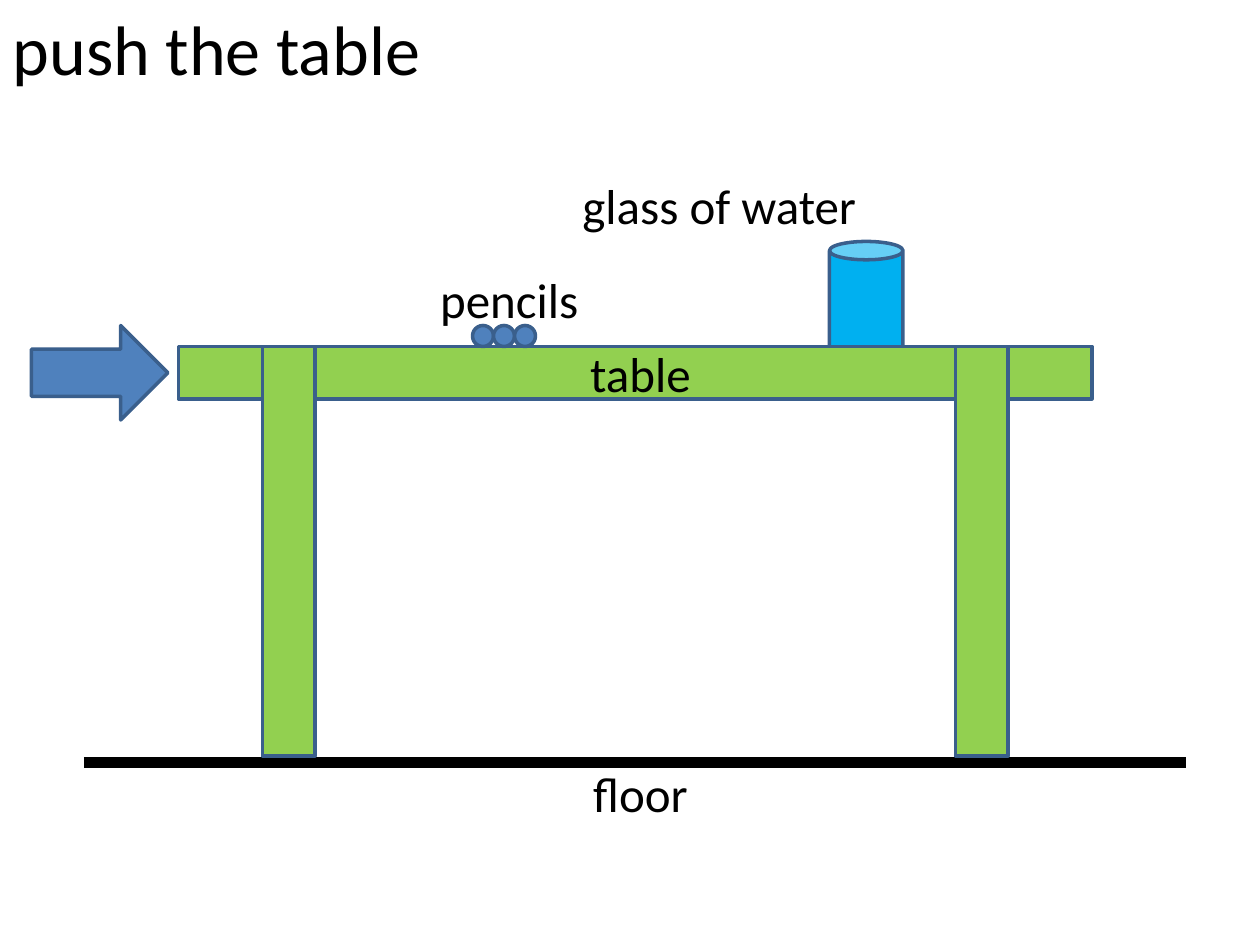
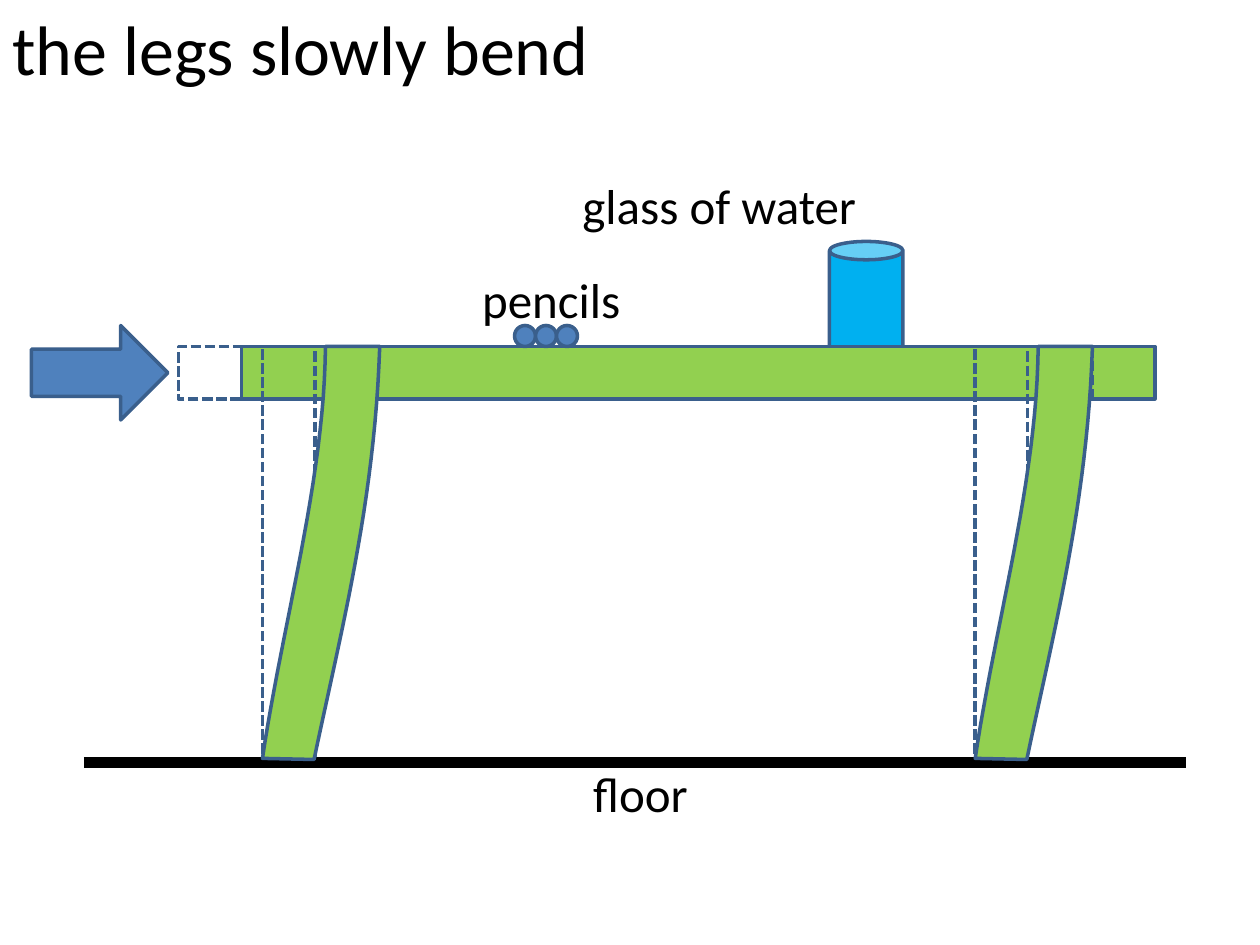
from lxml import etree
from pptx import Presentation
from pptx.dml.color import RGBColor
from pptx.enum import dml, shapes, text
from pptx.oxml import ns
from pptx.util import Pt

FONT = "Calibri"
BLACK, OUTLINE, BLUE = "000000", "3A5F8C", "4F81BD"
GREEN, WATER = "92D050", "00B0F0"

TABLE_TOP = (102, 198, 522, 30)
LEG_WIDTH, LEG_HEIGHT = 30, 234
PUSH = 36  # how far the table top moves
FLOOR = (48, 435.6, 630)
GLASS = (474, 138, 42, 66)
ARROW = (18, 186, 78, 54)
PENCIL = 12


def colour(code):
    return RGBColor.from_string(code)


def lengths(box):
    return [Pt(value) for value in box]


def finish(shape, fill, dashed=False):
    """Apply the common outline, with a solid fill or none."""
    shape.shadow.inherit = False
    if fill:
        shape.fill.solid()
        shape.fill.fore_color.rgb = colour(fill)
    else:
        shape.fill.background()
    shape.line.color.rgb = colour(OUTLINE)
    shape.line.width = Pt(2)
    if dashed:
        shape.line.dash_style = dml.MSO_LINE.SQUARE_DOT
        # sysDash is the short dash with even gaps
        shape.line._get_or_add_ln().find(ns.qn("a:prstDash")).set("val", "sysDash")


def add_part(page, kind, box, fill=None, dashed=False):
    shape = page.shapes.add_shape(kind, *lengths(box))
    finish(shape, fill, dashed)


def add_bar(page, box, fill=GREEN):
    """Draw a rectangle: solid, or a dashed ghost when fill is None."""
    add_part(page, shapes.MSO_SHAPE.RECTANGLE, box, fill, dashed=fill is None)


def write(box, words, size, align):
    frame = box.text_frame
    frame.text = words
    frame.word_wrap = True
    frame.auto_size = text.MSO_AUTO_SIZE.NONE
    frame.vertical_anchor = text.MSO_ANCHOR.MIDDLE
    para = frame.paragraphs[0]
    para.alignment = align
    font = para.runs[0].font
    font.name, font.size = FONT, Pt(size)
    font.color.rgb = colour(BLACK)


def add_label(page, words, box):
    write(page.shapes.add_textbox(*lengths(box)), words, 28, text.PP_ALIGN.CENTER)


def add_heading(page, words, width):
    title = page.shapes.title
    title.left, title.top, title.width, title.height = lengths((0, 0, width, 54))
    write(title, words, 40, text.PP_ALIGN.LEFT)


def add_floor(page):
    left, top, width = FLOOR
    line = page.shapes.add_connector(
        shapes.MSO_CONNECTOR.STRAIGHT, *lengths((left, top, left + width, top)))
    line.line.color.rgb = colour(BLACK)
    line.line.width = Pt(6)
    etree.SubElement(line._element.spPr, ns.qn("a:effectLst"))
    add_label(page, "floor", (42, 408, 648, 90))


def add_glass(page):
    add_part(page, shapes.MSO_SHAPE.CAN, GLASS, WATER)
    add_label(page, "glass of water", (306, 72, 210, 90))


def add_pencils(page, left):
    """Lay three round pencils side by side on the table top."""
    top = TABLE_TOP[1] - PENCIL
    for place in range(3):
        box = (left + place * PENCIL, top, PENCIL, PENCIL)
        add_part(page, shapes.MSO_SHAPE.OVAL, box, BLUE)
    add_label(page, "pencils", (left - 84, top - 60, 210, 90))


def curve(start, bend_1, bend_2, end, steps=24):
    """Return points along a cubic curve."""
    points = []
    for step in range(steps + 1):
        t = step / steps
        weights = ((1 - t) ** 3, 3 * t * (1 - t) ** 2, 3 * t ** 2 * (1 - t), t ** 3)
        corners = (start, bend_1, bend_2, end)
        points.append(tuple(sum(w * corner[axis] for w, corner in zip(weights, corners))
                            for axis in (0, 1)))
    return points


def add_bent_leg(page, left, top):
    right_side = curve((29.5, 236), (45, 162), (64, 90), (67, 0))
    left_side = curve((PUSH, 0), (35.3, 77), (11.5, 157.7), (0, 235.4))
    outline = [(Pt(left + x), Pt(top + y)) for x, y in right_side + left_side]
    builder = page.shapes.build_freeform(*outline[0])
    builder.add_line_segments(outline[1:], close=True)
    finish(builder.convert_to_shape(), GREEN)


def add_still_table(page, leg_lefts):
    add_bar(page, TABLE_TOP)
    for left in leg_lefts:
        add_bar(page, (left, TABLE_TOP[1], LEG_WIDTH, LEG_HEIGHT))
    add_label(page, "table", (42, 168, 648, 90))


def add_bent_table(page, leg_lefts):
    """Draw the moved table over dashed ghosts of its first position."""
    left, top, width, height = TABLE_TOP
    add_bar(page, (left + PUSH, top, width, height))
    add_bar(page, TABLE_TOP, fill=None)
    for leg_left in leg_lefts:
        add_bar(page, (leg_left, top, LEG_WIDTH, LEG_HEIGHT), fill=None)
        add_bent_leg(page, leg_left, top)


def add_scene(deck, heading, heading_width, add_table_parts, leg_lefts, pencils_left):
    page = deck.slides.add_slide(deck.slide_layouts[5])
    add_heading(page, heading, heading_width)
    add_glass(page)
    add_floor(page)
    add_table_parts(page, leg_lefts)
    add_part(page, shapes.MSO_SHAPE.RIGHT_ARROW, ARROW, BLUE)
    add_pencils(page, pencils_left)


def main():
    deck = Presentation()
    deck.slide_width, deck.slide_height = Pt(720), Pt(540)
    add_scene(deck, "push the table", 252, add_still_table, (150, 546), 270)
    add_scene(deck, "the legs slowly bend", 396, add_bent_table, (150, 557.3), 294)
    deck.save("out.pptx")


if __name__ == "__main__":
    main()
